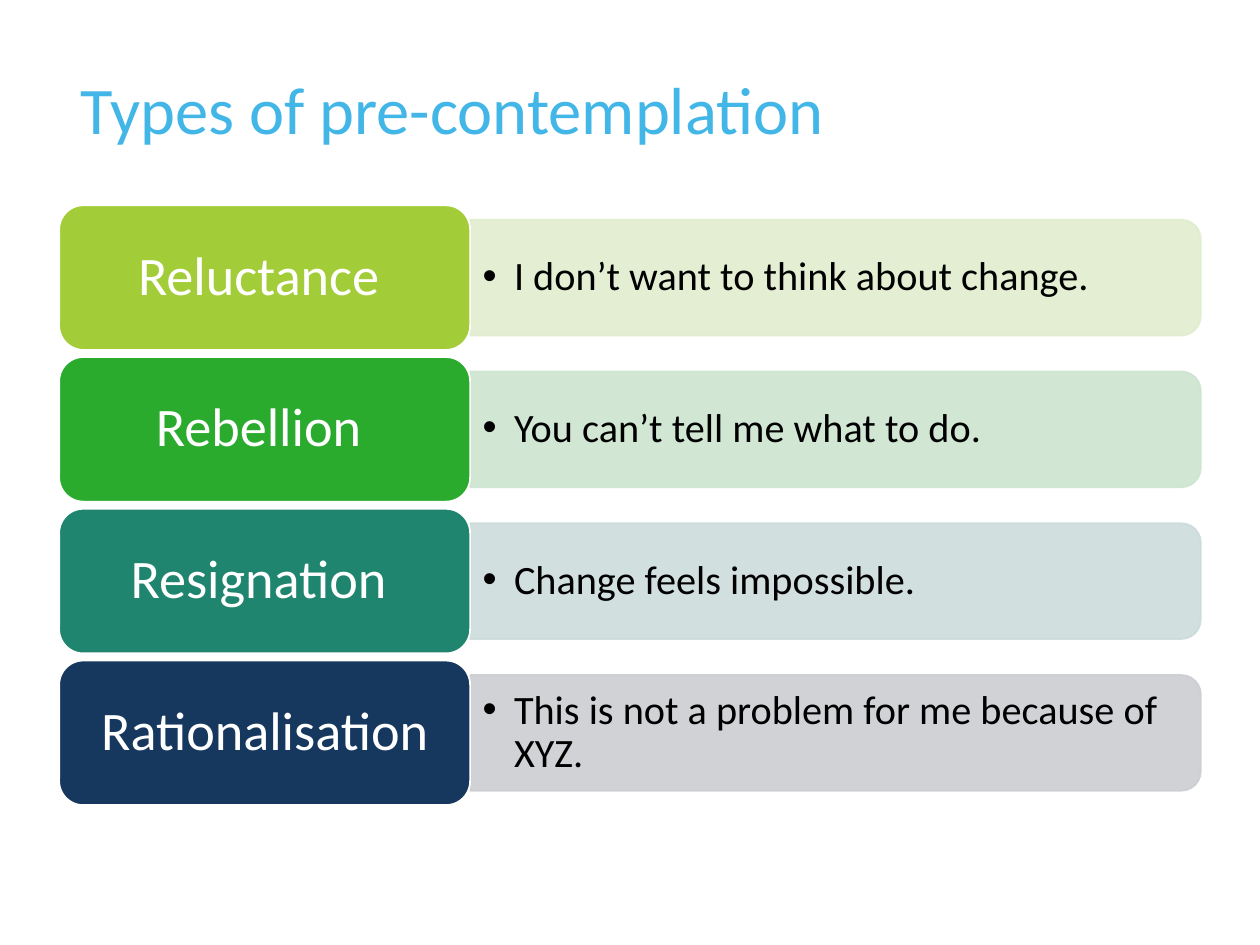
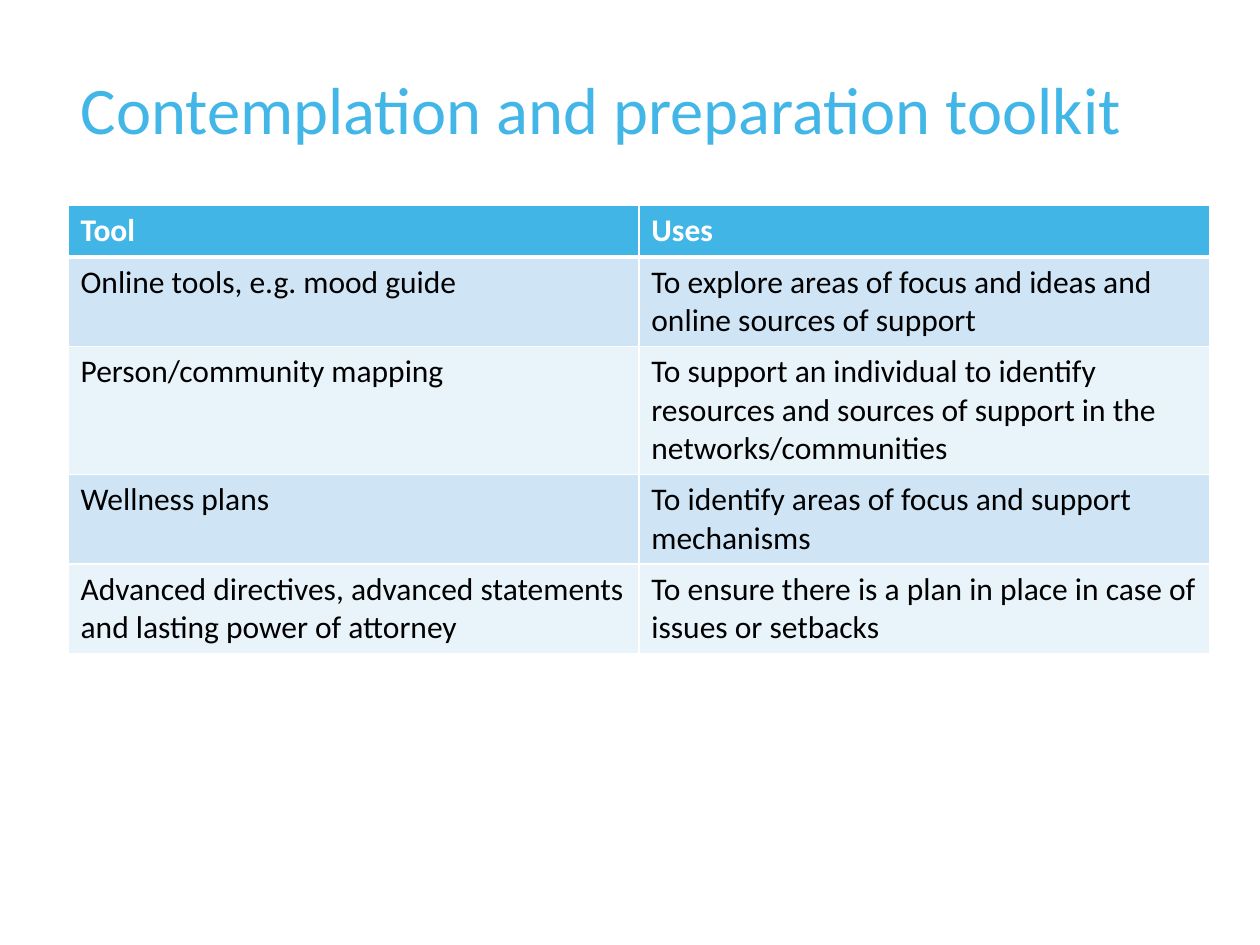
from collections import namedtuple

from lxml import etree
from pptx import Presentation
from pptx.dml.color import RGBColor
from pptx.enum.shapes import MSO_SHAPE
from pptx.enum.text import MSO_ANCHOR, MSO_AUTO_SIZE, PP_ALIGN
from pptx.oxml.ns import qn
from pptx.util import Emu, Inches, Pt

ROUNDED = MSO_SHAPE.ROUNDED_RECTANGLE
TOP_ROUNDED = MSO_SHAPE.ROUND_2_SAME_RECTANGLE
TOP, MIDDLE = MSO_ANCHOR.TOP, MSO_ANCHOR.MIDDLE
LEFT, CENTER = PP_ALIGN.LEFT, PP_ALIGN.CENTER
NO_AUTOFIT = MSO_AUTO_SIZE.NONE

FONT = "Calibri"
TITLE_ONLY = 5
LINE_SPACING = 0.9

WHITE = RGBColor(0xFF, 0xFF, 0xFF)
BLACK = RGBColor(0x00, 0x00, 0x00)
TITLE_BLUE = RGBColor(0x42, 0xB6, 0xE6)
HEADER_BLUE = RGBColor(0x41, 0xB6, 0xE6)
ROW_TINTS = RGBColor(0xCF, 0xE5, 0xF5), RGBColor(0xE9, 0xF3, 0xFA)
LIME, LIME_TINT = RGBColor(0xA3, 0xCD, 0x38), RGBColor(0xE0, 0xED, 0xCE)
GREEN, GREEN_TINT = RGBColor(0x2A, 0xAB, 0x2E), RGBColor(0xCC, 0xE5, 0xD0)
TEAL, TEAL_TINT = RGBColor(0x20, 0x85, 0x6E), RGBColor(0xCC, 0xDC, 0xDB)
NAVY, NAVY_TINT = RGBColor(0x16, 0x38, 0x5E), RGBColor(0xCC, 0xCE, 0xD2)

SLIDE_WIDTH, SLIDE_HEIGHT = Inches(10), Inches(7.5)
Box = namedtuple("Box", "left top width height")


def slide_box(left, top, width, height):
    """Return a box from percentages of the slide's width and height."""
    return Box(Emu(int(SLIDE_WIDTH * left / 100)), Emu(int(SLIDE_HEIGHT * top / 100)),
               Emu(int(SLIDE_WIDTH * width / 100)), Emu(int(SLIDE_HEIGHT * height / 100)))


TITLE_BOX = slide_box(5.4, 7.5, 90.6, 13.7)
TYPES_BOX = slide_box(4.7, 21.73, 90.6, 63.47)
TABLE_BOX = slide_box(5.4, 21.73, 90.6, 27.33)

# Label, statement, label colour, band colour
TYPES = [
    ("Reluctance ", "I don’t want to think about change.", LIME, LIME_TINT),
    ("Rebellion ", "You can’t tell me what to do.", GREEN, GREEN_TINT),
    ("Resignation ", "Change feels impossible.", TEAL, TEAL_TINT),
    ("Rationalisation", "This is not a problem for me because of XYZ.", NAVY, NAVY_TINT),
]

TOOLKIT = [
    ("Tool", "Uses"),
    ("Online tools, e.g. mood guide",
     "To explore areas of focus and ideas and online sources of support"),
    ("Person/community mapping",
     "To support an individual to identify resources and sources of support "
     "in the networks/communities"),
    ("Wellness plans", "To identify areas of focus and support mechanisms"),
    ("Advanced directives, advanced statements and lasting power of attorney",
     "To ensure there is a plan in place in case of issues or setbacks"),
]


def style_paragraph(paragraph, size, color, align=LEFT, bold=False, spacing=LINE_SPACING):
    paragraph.alignment = align
    paragraph.line_spacing = spacing
    font = paragraph.font
    font.name, font.size, font.bold = FONT, Pt(size), bold
    font.color.rgb = color


def add_bullet(paragraph, indent):
    properties = paragraph._p.get_or_add_pPr()
    properties.set("marL", str(indent))
    properties.set("indent", str(-indent))
    etree.SubElement(properties, qn("a:buFont"), typeface="Arial")
    etree.SubElement(properties, qn("a:buChar"), char="•")


def add_filled_shape(slide, kind, box, fill, line):
    shape = slide.shapes.add_shape(kind, *box)
    shape.shadow.inherit = False
    shape.fill.solid()
    shape.fill.fore_color.rgb = fill
    shape.line.color.rgb = line
    shape.line.width = Pt(1)
    return shape


def add_titled_slide(presentation, title_text):
    slide = presentation.slides.add_slide(presentation.slide_layouts[TITLE_ONLY])
    title = slide.shapes.title
    title.left, title.top, title.width, title.height = TITLE_BOX
    frame = title.text_frame
    frame.text = title_text
    frame.auto_size = NO_AUTOFIT
    frame.vertical_anchor = TOP
    style_paragraph(frame.paragraphs[0], 38, TITLE_BLUE)
    return slide


def add_band(slide, box, statement, color):
    """Place a band rounded on its right side, with a bulleted statement."""
    # The band stands upright around the box's centre, then turns a quarter
    upright = Box(box.left + (box.width - box.height) // 2,
                  box.top + (box.height - box.width) // 2, box.height, box.width)
    band = add_filled_shape(slide, TOP_ROUNDED, upright, color, color)
    band.rotation = 90
    for rgb in band._element.spPr.iter(qn("a:srgbClr")):
        etree.SubElement(rgb, qn("a:alpha"), val="90000")

    frame = slide.shapes.add_textbox(*box).text_frame
    frame.word_wrap = True
    frame.vertical_anchor = MIDDLE
    paragraph = frame.paragraphs[0]
    paragraph.text = statement
    paragraph.line_spacing = LINE_SPACING
    add_bullet(paragraph, Inches(0.25))
    style_paragraph(paragraph, 23, BLACK)


def add_label(slide, box, text, color):
    frame = add_filled_shape(slide, ROUNDED, box, color, WHITE).text_frame
    frame.word_wrap = True
    frame.vertical_anchor = MIDDLE
    frame.text = text
    style_paragraph(frame.paragraphs[0], 31, WHITE, CENTER)


def add_type_rows(slide, box, types):
    """Stack rows of label and band; gaps are 5% of a label's height."""
    gap_share, label_share, band_share = 0.05, 0.36, 0.8
    label_height = int(box.height / (len(types) + (len(types) - 1) * gap_share))
    label_width = int(box.width * label_share)
    band_height = int(label_height * band_share)
    for index, (label, statement, color, tint) in enumerate(types):
        top = box.top + int(index * label_height * (1 + gap_share))
        band_box = Box(box.left + label_width, top + (label_height - band_height) // 2,
                       box.width - label_width, band_height)
        add_band(slide, band_box, statement, tint)
        add_label(slide, Box(box.left, top, label_width, label_height), label, color)


def set_cell_borders(cell, widths):
    properties = cell._tc.get_or_add_tcPr()
    for side, width in widths.items():
        line = etree.SubElement(properties, qn(f"a:ln{side}"), w=str(Pt(width)))
        fill = etree.SubElement(line, qn("a:solidFill"))
        etree.SubElement(fill, qn("a:srgbClr"), val=str(WHITE))


def add_toolkit_table(slide, box, rows):
    table = slide.shapes.add_table(len(rows), len(rows[0]), *box).table
    for row_index, texts in enumerate(rows):
        is_header = row_index == 0
        fill = HEADER_BLUE if is_header else ROW_TINTS[(row_index - 1) % 2]
        # A thicker rule parts the header from the body
        borders = {"L": 1, "R": 1, "T": 3 if row_index == 1 else 1, "B": 3 if is_header else 1}
        for column_index, text in enumerate(texts):
            cell = table.cell(row_index, column_index)
            cell.text = text
            set_cell_borders(cell, borders)
            cell.fill.solid()
            cell.fill.fore_color.rgb = fill
            style_paragraph(cell.text_frame.paragraphs[0], 18,
                            WHITE if is_header else BLACK, bold=is_header, spacing=1.0)


def main():
    presentation = Presentation()
    presentation.slide_width, presentation.slide_height = SLIDE_WIDTH, SLIDE_HEIGHT

    types_slide = add_titled_slide(presentation, "Types of pre-contemplation")
    add_type_rows(types_slide, TYPES_BOX, TYPES)

    toolkit_slide = add_titled_slide(presentation, "Contemplation and preparation toolkit")
    add_toolkit_table(toolkit_slide, TABLE_BOX, TOOLKIT)

    presentation.save("out.pptx")


if __name__ == "__main__":
    main()
